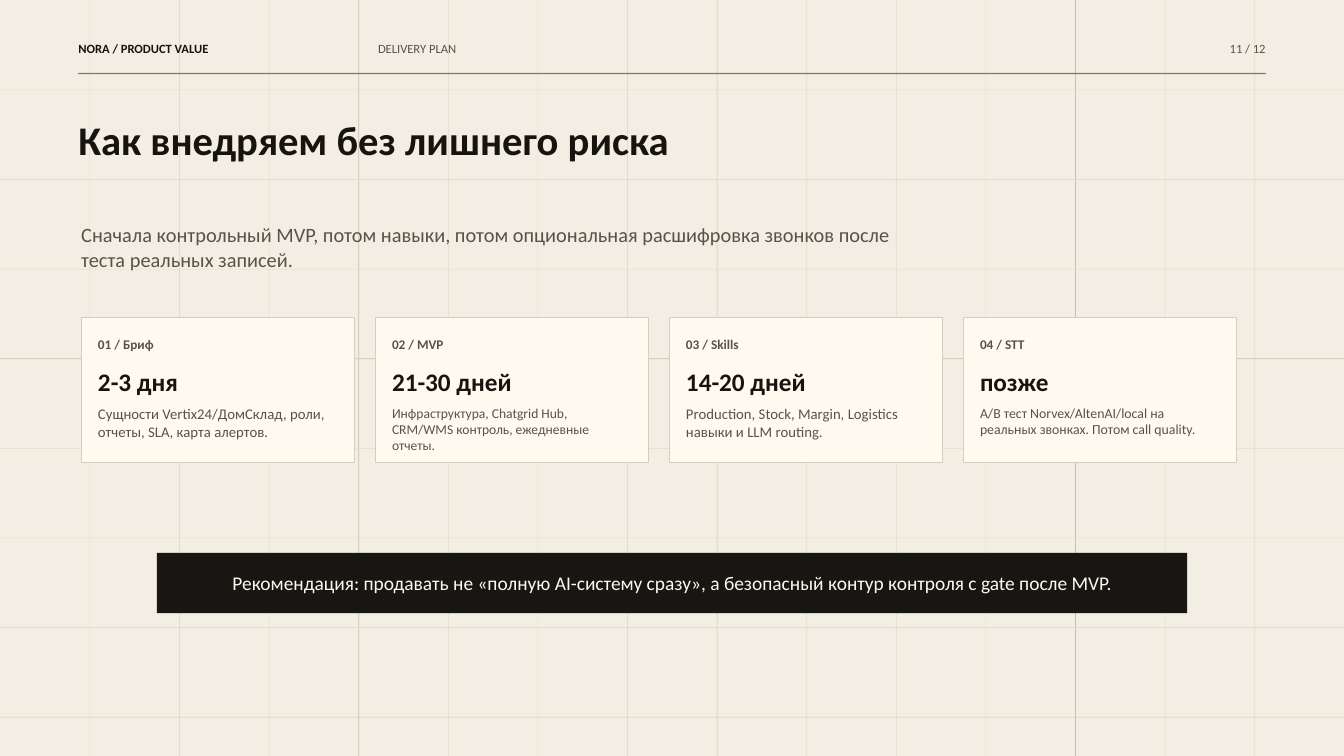
from pptx import Presentation
from pptx.dml.color import RGBColor
from pptx.enum.shapes import MSO_SHAPE
from pptx.enum.text import MSO_ANCHOR, MSO_AUTO_SIZE, PP_ALIGN
from pptx.util import Inches, Pt

COLUMNS, ROWS = 480, 270
UNIT = Inches(20) / COLUMNS
CELL = 32
HAIRLINE = 0.25

PAPER = RGBColor(0xF3, 0xEE, 0xE3)
GRID_LIGHT = RGBColor(0xE5, 0xDA, 0xCC)
GRID_STRONG = RGBColor(0xCD, 0xBE, 0xAC)
RULE = RGBColor(0x81, 0x73, 0x65)
INK = RGBColor(0x17, 0x13, 0x0F)
MUTED = RGBColor(0x5B, 0x51, 0x48)
CARD_FILL = RGBColor(0xFF, 0xFA, 0xF0)
CARD_LINE = RGBColor(0xD8, 0xCC, 0xBC)
BANNER_FILL = RGBColor(0x18, 0x16, 0x12)
BANNER_TEXT = RGBColor(0xFF, 0xF8, 0xEC)

TITLE = "Как внедряем без лишнего риска"
LEAD = ("Сначала контрольный MVP, потом навыки, потом опциональная "
        "расшифровка звонков после теста реальных записей.")
ADVICE = ("Рекомендация: продавать не «полную AI-систему сразу», "
          "а безопасный контур контроля с gate после MVP.")
STAGES = [
    ("01 / Бриф", "2-3 дня",
     "Сущности Vertix24/ДомСклад, роли, отчеты, SLA, карта алертов.", 15.8),
    ("02 / MVP", "21-30 дней",
     "Инфраструктура, Chatgrid Hub, CRM/WMS контроль, ежедневные отчеты.", 14.5),
    ("03 / Skills", "14-20 дней",
     "Production, Stock, Margin, Logistics навыки и LLM routing.", 15.8),
    ("04 / STT", "позже",
     "A/B тест Norvex/AltenAI/local на реальных звонках. Потом call quality.", 14.8),
]


def to_length(box):
    """Turn a box in grid units into slide lengths."""
    return [round(value * UNIT) for value in box]


def within(box, left, top, width, height):
    """Place a part relative to the corner of its box."""
    return box[0] + left, box[1] + top, width, height


def add_block(slide, box, fill, line=None):
    """Draw a flat rectangle, outlined if a line colour is given."""
    shape = slide.shapes.add_shape(MSO_SHAPE.RECTANGLE, *to_length(box))
    shape.shadow.inherit = False
    shape.fill.solid()
    shape.fill.fore_color.rgb = fill
    if line is None:
        shape.line.fill.background()
    else:
        shape.line.color.rgb = line
        shape.line.width = Pt(0.9)


def write_text(shape, text, size, color, bold=False, align=PP_ALIGN.LEFT):
    """Fill a shape with one paragraph and no margins."""
    frame = shape.text_frame
    frame_format = {
        "margin_left": 0, "margin_top": 0, "margin_right": 0, "margin_bottom": 0,
        "word_wrap": True, "auto_size": MSO_AUTO_SIZE.NONE,
        "vertical_anchor": MSO_ANCHOR.TOP,
    }
    for name, value in frame_format.items():
        setattr(frame, name, value)
    paragraph = frame.paragraphs[0]
    paragraph.alignment = align
    run = paragraph.add_run()
    run.text = text
    for name, value in {"name": "Calibri", "size": Pt(size), "bold": bold}.items():
        setattr(run.font, name, value)
    run.font.color.rgb = color


def add_text(slide, box, *content, **style):
    """Add a text box with one paragraph."""
    write_text(slide.shapes.add_textbox(*to_length(box)), *content, **style)


def add_grid(slide, box):
    """Rule the box into square cells."""
    left, top, width, height = box
    for column in range(1, width // CELL):
        color = GRID_LIGHT if column % 4 else GRID_STRONG
        add_block(slide, (left + column * CELL, top, HAIRLINE, height), color)
    for row in range(1, height // CELL + 1):
        color = GRID_LIGHT if row % 4 else GRID_STRONG
        add_block(slide, (left, top + row * CELL, width, HAIRLINE), color)


def add_header(slide, box):
    """Add the running header and its rule."""
    width, height = box[2:]
    add_text(slide, within(box, 0, 0, 105, 7), "NORA / PRODUCT VALUE", 13.5, INK, bold=True)
    add_text(slide, within(box, 107, 0, 210, 7), "DELIVERY PLAN", 13.5, MUTED)
    add_text(slide, within(box, width - 42, 0, 42, 7), "11 / 12", 13.5, MUTED,
             align=PP_ALIGN.RIGHT)
    add_block(slide, within(box, 0, height - 0.5, width, 0.5), RULE)


def add_heading(slide, box):
    """Place the title above the lead sentence."""
    title = slide.shapes.title
    title._element.getparent().append(title._element)
    title.left, title.top, title.width, title.height = to_length(within(box, 0, 0, 265, 34.5))
    write_text(title, TITLE, 43.5, INK, bold=True)
    add_text(slide, within(box, 1, 38.5, 305, 19.5), LEAD, 21.8, MUTED)


def add_card(slide, box, label, term, details, details_size):
    """Add the card of one stage."""
    inner = box[2] - 12
    add_block(slide, box, CARD_FILL, CARD_LINE)
    add_text(slide, within(box, 6, 6.5, inner, 7), label, 14.2, MUTED, bold=True)
    add_text(slide, within(box, 6, 17.5, inner, 10), term, 27, INK, bold=True)
    add_text(slide, within(box, 6, 31, inner, 14.5), details, details_size, MUTED)


def add_stages(slide, box, gap=7.5):
    """Share the box among the stage cards."""
    width = (box[2] - gap * (len(STAGES) - 1)) / len(STAGES)
    for index, stage in enumerate(STAGES):
        add_card(slide, within(box, index * (width + gap), 0, width, box[3]), *stage)


def add_banner(slide, box):
    """Add the dark banner with the advice."""
    add_block(slide, box, BANNER_FILL)
    add_text(slide, within(box, 9, 6.5, box[2] - 18, 8), ADVICE, 20.8, BANNER_TEXT,
             align=PP_ALIGN.CENTER)


def main():
    """Build and save the slide."""
    presentation = Presentation()
    presentation.slide_width = round(COLUMNS * UNIT)
    presentation.slide_height = round(ROWS * UNIT)
    slide = presentation.slides.add_slide(presentation.slide_layouts[5])
    slide.background.fill.solid()
    slide.background.fill.fore_color.rgb = PAPER
    add_grid(slide, (0, 0, COLUMNS, ROWS))
    add_header(slide, (28, 14.5, 424, 12))
    add_heading(slide, (28, 41, 424, 58))
    add_stages(slide, (29, 113.5, 412.5, 51.5))
    add_banner(slide, (56, 197.5, 368, 21.5))
    presentation.save("out.pptx")


if __name__ == "__main__":
    main()
